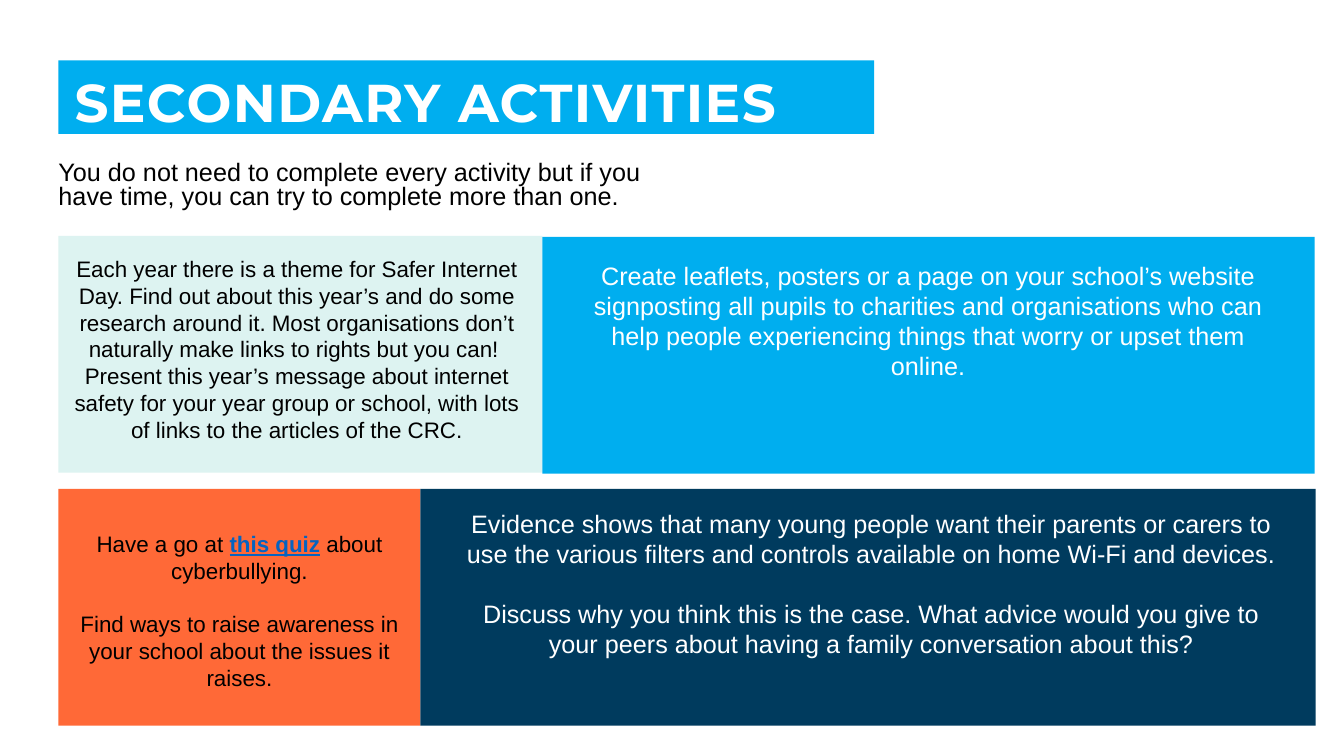
from pptx import Presentation
from pptx.dml.color import RGBColor
from pptx.enum.shapes import MSO_SHAPE
from pptx.enum.text import MSO_ANCHOR, PP_ALIGN
from pptx.util import Emu, Pt

PX = 9144  # EMU per px, 100 px to the inch
RECT = MSO_SHAPE.RECTANGLE
TOP, MIDDLE = MSO_ANCHOR.TOP, MSO_ANCHOR.MIDDLE
LEFT, CENTER = PP_ALIGN.LEFT, PP_ALIGN.CENTER

COLORS = {
    "sky": "00AEEF", "mint": "DDF3F1", "orange": "FF6937", "navy": "003B5E",
    "white": "FFFFFF", "black": "000000", "link": "0563C1",
}
TITLE = {"name": "Montserrat", "size": Pt(38), "bold": True, "color": "white"}
INTRO = {"name": "Arial", "size": Pt(18), "color": "black"}
SMALL = {"name": "Arial", "size": Pt(16), "color": "black"}
LARGE = {"name": "Arial", "size": Pt(18), "color": "white"}
LINK = {"bold": True, "underline": True, "color": "link"}


def rgb(name):
    return RGBColor.from_string(COLORS[name])


def emu(box):
    return [Emu(v * PX) for v in box]


def add_panel(slide, box, fill):
    sp = slide.shapes.add_shape(RECT, *emu(box))
    sp.shadow.inherit = False
    sp.fill.solid()
    sp.fill.fore_color.rgb = rgb(fill)
    sp.line.fill.background()
    return sp


def write(sp, paragraphs, fmt, align=LEFT, anchor=TOP, insets=(10, 5, 10, 5),
          spacing=None, gap=0):
    """Each paragraph is a list of (text, extra format) runs."""
    tf = sp.text_frame
    tf.word_wrap = True
    tf.vertical_anchor = anchor
    tf.margin_left, tf.margin_top, tf.margin_right, tf.margin_bottom = emu(insets)
    for i, runs in enumerate(paragraphs):
        p = tf.add_paragraph() if i else tf.paragraphs[0]
        p.alignment = align
        if spacing:
            p.line_spacing = spacing
        if i and gap:
            p.space_before = Pt(gap)
        for text, extra in runs:
            r = p.add_run()
            r.text = text
            for key, value in {**fmt, **extra}.items():
                if key == "color":
                    r.font.color.rgb = rgb(value)
                else:
                    setattr(r.font, key, value)


def add_header(slide, box):
    x, y, w, h = box
    banner = add_panel(slide, (x, y, w, 73), "sky")
    write(banner, [[("SECONDARY ACTIVITIES", {})]], TITLE, anchor=MIDDLE,
          insets=(16, 16, 12, 0), spacing=0.9)
    for r in banner.text_frame.paragraphs[0].runs:
        r.font._element.set("spc", "100")  # letter spacing of 1 pt
    intro = slide.shapes.add_textbox(*emu((x, y + 96, 621, h - 96)))
    write(intro, [[("You do not need to complete every activity but if you have "
                    "time, you can try to complete more than one.", {})]],
          INTRO, insets=(0, 5, 10, 5), spacing=0.8)


def add_card(slide, box, fill, text_box, paragraphs, fmt, gap=0):
    """Coloured panel with text placed relative to its corner."""
    x, y, w, h = box
    dx, dy, tw, th = text_box
    add_panel(slide, box, fill)
    sp = slide.shapes.add_textbox(*emu((x + dx, y + dy, tw, th)))
    write(sp, paragraphs, fmt, align=CENTER, gap=gap)


def add_top_row(slide, box):
    x, y, w, h = box
    split = 480
    add_card(slide, (x, y, split, h), "mint", (0, 14, 473, 215), [
        [("Each year there is a theme for Safer Internet Day. Find out about "
          "this year’s and do some research around it. Most organisations "
          "don’t naturally make links to rights but you can! ", {})],
        [("Present this year’s message about internet safety for your year "
          "group or school, with lots of links to the articles of the CRC.", {})],
    ], SMALL)
    add_card(slide, (x + split, y + 1, w - split, h), "sky", (19, 18, 727, 131), [
        [("Create leaflets, posters or a page on your school’s website "
          "signposting all pupils to charities and organisations who can help "
          "people experiencing things that worry or upset them online.", {})],
    ], LARGE)


def add_bottom_row(slide, box):
    x, y, w, h = box
    split = 359
    add_card(slide, (x, y, split, h), "orange", (0, 36, split, 172), [
        [("Have a go at ", {}), ("this quiz", LINK), (" about cyberbullying.", {})],
        [("Find ways to raise awareness in your school about the issues it "
          "raises.", {})],
    ], SMALL, gap=19)
    add_card(slide, (x + split, y, w - split, h), "navy", (33, 14, 828, 162), [
        [("Evidence shows that many young people want their parents or carers "
          "to use the various filters and controls available on home Wi-Fi "
          "and devices.", {})],
        [("Discuss why you think this is the case. What advice would you give "
          "to your peers about having a family conversation about this?", {})],
    ], LARGE, gap=21.5)


def main():
    prs = Presentation()
    prs.slide_width, prs.slide_height = emu((1333, 750))
    s = prs.slides.add_slide(prs.slide_layouts[6])
    add_header(s, (58, 60, 809, 158))
    add_top_row(s, (58, 234, 1246, 235))
    add_bottom_row(s, (58, 485, 1247, 235))
    prs.save("out.pptx")


if __name__ == "__main__":
    main()
